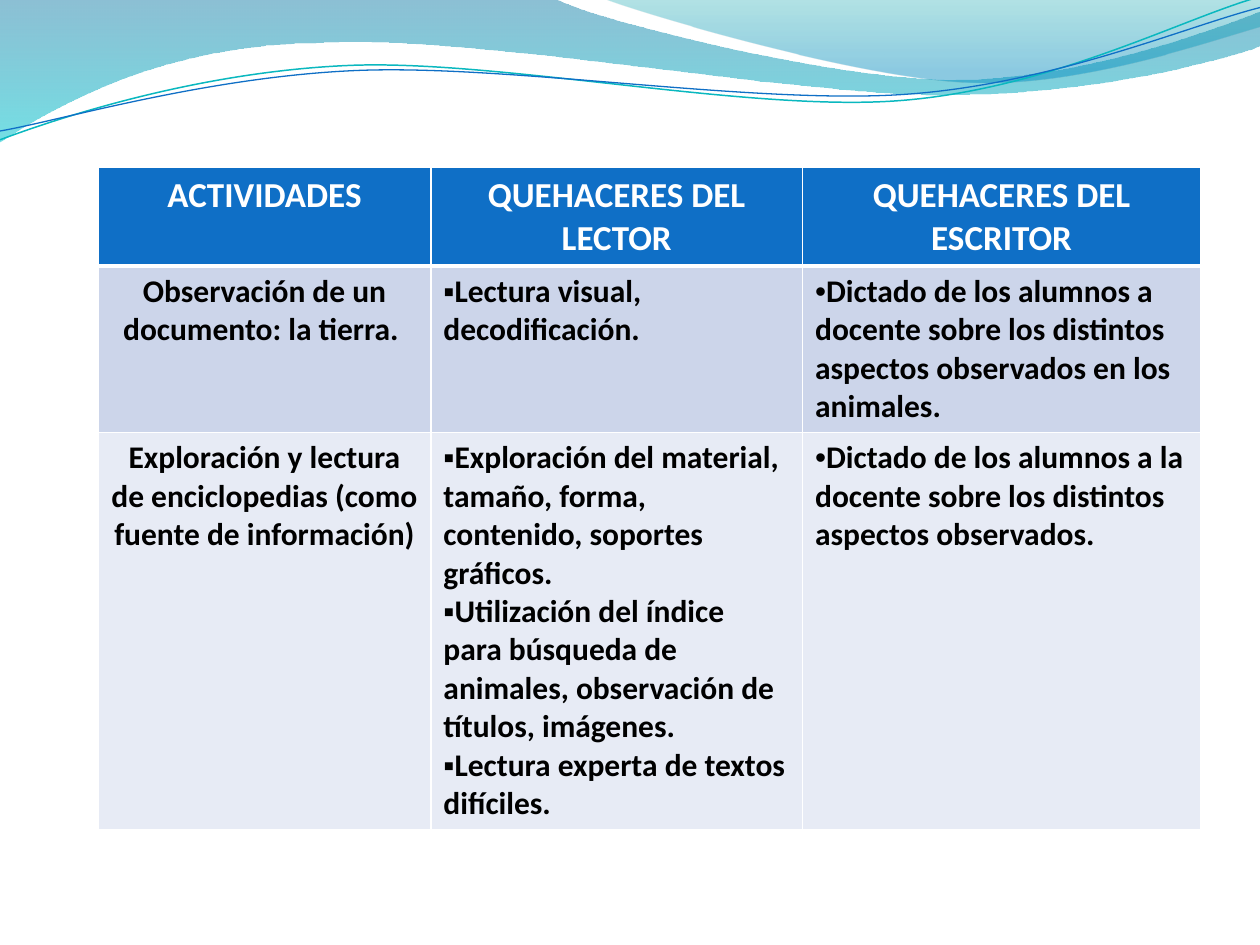
from dataclasses import dataclass

from lxml import etree
from pptx import Presentation
from pptx import util as u
from pptx.dml.color import RGBColor
from pptx.enum import text
from pptx.oxml import ns

Point = tuple[float, float]

WHITE = RGBColor(0xFF, 0xFF, 0xFF)
BLACK = RGBColor(0x00, 0x00, 0x00)
BLUE = RGBColor(0x0F, 0x6F, 0xC6)
TURQUOISE = RGBColor(0x0A, 0xB8, 0xBF)
DEEP_BLUE = RGBColor(0x00, 0x74, 0xA1)
CYAN = RGBColor(0x00, 0xC6, 0xCF)
TEAL = RGBColor(0x00, 0xA1, 0xA9)
SKY = RGBColor(0x00, 0x8B, 0xBF)
BAND_DARK = RGBColor(0xCC, 0xD5, 0xEA)
BAND_LIGHT = RGBColor(0xE7, 0xEB, 0xF5)
FONT = "Calibri"
BULLET_FONT = "Arial"


@dataclass(frozen=True)
class Stop:
    position: float
    color: RGBColor
    opacity: int


@dataclass(frozen=True)
class Wave:
    start: Point
    segments: list[tuple[Point, ...]]
    stops: tuple[Stop, ...] = ()
    line: RGBColor | None = None
    width: float = 0


@dataclass(frozen=True)
class Entry:
    paragraphs: list[str]
    bullet: str = ""


@dataclass(frozen=True)
class Row:
    height: float
    fill: RGBColor
    color: RGBColor
    size: int
    top: int
    bottom: int
    entries: list[Entry]


WAVES = [
    Wave((0, -0.01), [
        ((4.4, -0.01),),
        ((4.76, 0.17), (6.64, 0.63), (7.58, 0.63)),
        ((8.53, 0.63), (9.58, 0.26), (10, 0.09)),
        ((10.01, 0.36),),
        ((9.83, 0.44), (8.7, 0.76), (7.46, 0.75)),
        ((6.22, 0.75), (3.82, 0.28), (2.57, 0.34)),
        ((1.29, 0.35), (0.46, 0.83), (-0.01, 1.13)),
        ((0, -0.01),),
    ], stops=(Stop(0, DEEP_BLUE, 45), Stop(1, CYAN, 55))),
    Wave((4.79, -0.01), [
        ((5.09, 0.11), (6.82, 0.62), (7.69, 0.65)),
        ((8.56, 0.69), (9.61, 0.32), (10, 0.21)),
        ((10, 0),),
        ((4.79, -0.01),),
    ], stops=(Stop(0, TEAL, 30), Stop(0.8, SKY, 45))),
    Wave((0, 1.11), [
        ((0.48, 0.93), (1.58, 0.57), (2.77, 0.52)),
        ((3.95, 0.47), (5.93, 0.89), (7.13, 0.8)),
        ((8.33, 0.71), (9.38, 0.15), (9.98, -0.02)),
    ], line=TURQUOISE, width=0.85),
    Wave((0, 1.04), [
        ((0.47, 0.96), (1.64, 0.61), (2.83, 0.56)),
        ((4.03, 0.51), (5.97, 0.83), (7.17, 0.75)),
        ((8.36, 0.67), (9.41, 0.21), (10, 0.06)),
    ], line=BLUE, width=0.75),
]

COLUMN_WIDTHS = [2.64, 2.95, 3.16]
ROWS = [
    Row(0.75, BLUE, WHITE, 20, 1, 3, [
        Entry(["ACTIVIDADES"]),
        Entry(["QUEHACERES DEL LECTOR"]),
        Entry(["QUEHACERES DEL ESCRITOR"]),
    ]),
    Row(1.27, BAND_DARK, BLACK, 18, 3, 1, [
        Entry(["Observación de un documento: la tierra. "]),
        Entry(["Lectura visual, decodificación."], "▪"),
        Entry(["Dictado de los alumnos a docente sobre los distintos "
               "aspectos observados en los animales."], "•"),
    ]),
    Row(2.84, BAND_LIGHT, BLACK, 18, 1, 1, [
        Entry(["Exploración y lectura de enciclopedias (como fuente de información)"]),
        Entry(["Exploración del material,  tamaño, forma, contenido, soportes gráficos.",
               "Utilización del índice para búsqueda de animales, "
               "observación de títulos, imágenes.",
               "Lectura experta de textos difíciles."], "▪"),
        Entry(["Dictado de los alumnos a la docente sobre los distintos "
               "aspectos observados."], "•"),
    ]),
]


def bend_curves(ribbon, segments: list[tuple[Point, ...]]) -> None:
    strokes = iter(list(ribbon._element.iter(ns.qn("a:lnTo"))))
    for segment in segments:
        group = [next(strokes) for _ in segment]
        if len(group) == 1:
            continue
        curve = etree.Element(ns.qn("a:cubicBezTo"))
        group[0].addprevious(curve)
        for stroke in group:
            curve.append(stroke[0])
            stroke.getparent().remove(stroke)


def draw_wave(slide, wave: Wave) -> None:
    points = [(u.Inches(x), u.Inches(y)) for segment in wave.segments for x, y in segment]
    builder = slide.shapes.build_freeform(*(u.Inches(value) for value in wave.start))
    builder.add_line_segments(points, close=bool(wave.stops))
    ribbon = builder.convert_to_shape()
    bend_curves(ribbon, wave.segments)
    ribbon.shadow.inherit = False
    if wave.line is not None:
        ribbon.fill.background()
        ribbon.line.color.rgb = wave.line
        ribbon.line.width = u.Pt(wave.width)
        return
    ribbon.line.fill.background()
    ribbon.fill.gradient()
    ribbon.fill.gradient_angle = 270
    for target, stop in zip(ribbon.fill.gradient_stops, wave.stops):
        target.color.rgb = stop.color
        target.position = stop.position
    tints = ribbon._element.spPr.iter(ns.qn("a:srgbClr"))
    for tint, stop in zip(tints, wave.stops):
        etree.SubElement(tint, ns.qn("a:alpha"), val=str(stop.opacity * 1000))


def set_borders(cell, top: int, bottom: int) -> None:
    properties = cell._tc.get_or_add_tcPr()
    for side, width in (("L", 1), ("R", 1), ("T", top), ("B", bottom)):
        edge = etree.SubElement(properties, ns.qn(f"a:ln{side}"), w=str(u.Pt(width)))
        paint = etree.SubElement(edge, ns.qn("a:solidFill"))
        etree.SubElement(paint, ns.qn("a:srgbClr"), val=str(WHITE))


def fill_cell(cell, row: Row, entry: Entry) -> None:
    set_borders(cell, row.top, row.bottom)
    cell.fill.solid()
    cell.fill.fore_color.rgb = row.fill
    frame = cell.text_frame
    for index, wording in enumerate(entry.paragraphs):
        paragraph = frame.add_paragraph() if index else frame.paragraphs[0]
        if entry.bullet:
            properties = paragraph._p.get_or_add_pPr()
            properties.set("marL", "0")
            properties.set("indent", "0")
            etree.SubElement(properties, ns.qn("a:buFont"), typeface=BULLET_FONT)
            etree.SubElement(properties, ns.qn("a:buChar"), char=entry.bullet)
        paragraph.alignment = text.PP_ALIGN.LEFT if entry.bullet else text.PP_ALIGN.CENTER
        run = paragraph.add_run()
        run.text = wording
        run.font.name = FONT
        run.font.size = u.Pt(row.size)
        run.font.bold = True
        run.font.color.rgb = row.color


def draw_table(slide, rows: list[Row]) -> None:
    table = slide.shapes.add_table(
        len(rows), len(COLUMN_WIDTHS), u.Inches(0.78), u.Inches(1.33),
        u.Inches(sum(COLUMN_WIDTHS)), u.Inches(sum(row.height for row in rows))).table
    for column, width in zip(table.columns, COLUMN_WIDTHS):
        column.width = u.Inches(width)
    for table_row, row in zip(table.rows, rows):
        table_row.height = u.Inches(row.height)
        for cell, entry in zip(table_row.cells, row.entries):
            fill_cell(cell, row, entry)


def main() -> None:
    deck = Presentation()
    deck.slide_width, deck.slide_height = u.Inches(10), u.Inches(7.5)
    slide = deck.slides.add_slide(deck.slide_layouts[6])
    for wave in WAVES:
        draw_wave(slide, wave)
    draw_table(slide, ROWS)
    deck.save("out.pptx")


if __name__ == "__main__":
    main()
